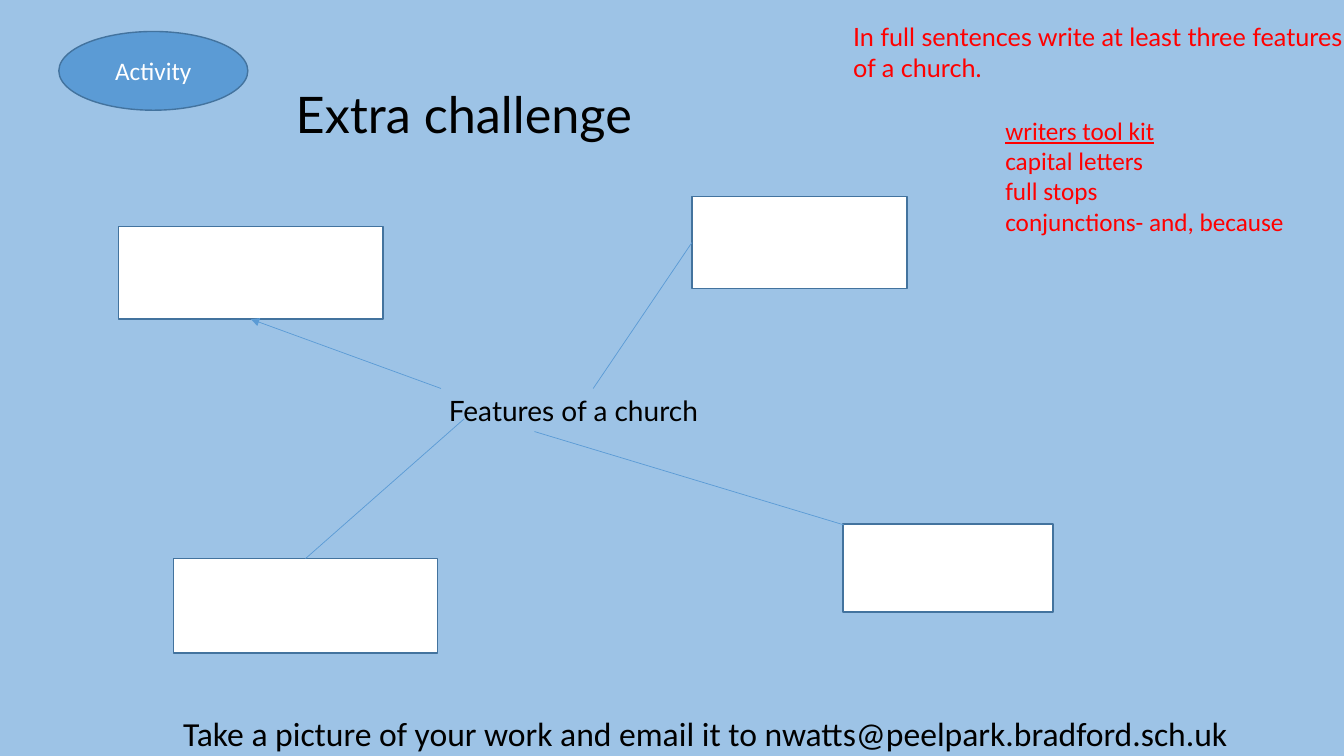
from dataclasses import dataclass
from typing import Optional

from lxml import etree
from pptx import Presentation, util as u
from pptx.dml.color import RGBColor
from pptx.enum import shapes, text
from pptx.oxml import ns

EMU_PER_PX = 9525
TITLE_ONLY = 5
BACKGROUND, BLUE, DARK_BLUE = "9DC3E6", "5B9BD5", "43739E"
WHITE, BLACK, RED = "FFFFFF", "000000", "FF0000"
TOP, LEFT, BOTTOM = 0, 1, 2


@dataclass
class Area:
    left: int
    top: int
    width: int
    height: int

    def emu(self) -> list:
        return [px(n) for n in (self.left, self.top, self.width, self.height)]


@dataclass
class AnswerBox:
    """An empty box and the line that runs to it from the middle phrase."""
    area: Area
    start: tuple
    end: tuple
    side: Optional[int] = None
    arrow: bool = False


@dataclass
class Label:
    area: Area
    lines: list
    size: int
    font: str
    color: str
    underline_first: bool = False


ANSWER_BOXES = [
    AnswerBox(Area(113, 216, 252, 88), (420, 370), (239, 304), BOTTOM, arrow=True),
    AnswerBox(Area(659, 187, 205, 88), (565, 370), (659, 231), LEFT),
    AnswerBox(Area(803, 499, 200, 84), (509, 411), (804, 500)),
    AnswerBox(Area(165, 532, 252, 90), (442, 399), (291, 532), TOP),
]

LABELS = [
    Label(Area(418, 370, 296, 42), ["Features of a church"], 20, "Lato", BLACK),
    Label(Area(803, 16, 494, 97),
          ["In full sentences write at least three features of a church."],
          18, "Lato", RED),
    Label(Area(948, 105, 332, 156),
          ["writers tool kit", "capital letters", "full stops",
           "conjunctions- and, because"], 18, "Calibri", RED, underline_first=True),
    Label(Area(165, 674, 1024, 48),
          ["Take a picture of your work and email it to nwatts@peelpark.bradford.sch.uk"],
          24, "Calibri", BLACK),
]


def px(length: int) -> u.Emu:
    return u.Emu(length * EMU_PER_PX)


def rgb(color: str) -> RGBColor:
    return RGBColor.from_string(color)


def write(shape, lines: list, *, size: int, font: str, color: str,
          align=text.PP_ALIGN.LEFT, anchor=text.MSO_ANCHOR.TOP,
          underline_first: bool = False) -> None:
    frame = shape.text_frame
    frame.word_wrap = True
    frame.auto_size = text.MSO_AUTO_SIZE.NONE
    frame.vertical_anchor = anchor
    frame.text = "\n".join(lines)
    for index, paragraph in enumerate(frame.paragraphs):
        paragraph.alignment = align
        for run in paragraph.runs:
            run.font.size = u.Pt(size)
            run.font.name = font
            run.font.color.rgb = rgb(color)
            if underline_first and index == 0:
                run.font.underline = True


def add_filled(slide, kind, area: Area, fill: str):
    shape = slide.shapes.add_shape(kind, *area.emu())
    shape.shadow.inherit = False
    shape.fill.solid()
    shape.fill.fore_color.rgb = rgb(fill)
    shape.line.color.rgb = rgb(DARK_BLUE)
    shape.line.width = u.Pt(1)
    return shape


def add_answer_box(slide, box: AnswerBox) -> None:
    shape = add_filled(slide, shapes.MSO_SHAPE.RECTANGLE, box.area, WHITE)
    line = slide.shapes.add_connector(
        shapes.MSO_CONNECTOR.STRAIGHT, *[px(n) for n in box.start + box.end])
    if box.side is not None:
        line.end_connect(shape, box.side)
    line.line.color.rgb = rgb(BLUE)
    line.line.width = u.Pt(0.5)
    if box.arrow:
        etree.SubElement(line.line._get_or_add_ln(), ns.qn("a:tailEnd"), type="triangle")
    etree.SubElement(line._element.spPr, ns.qn("a:effectLst"))


def add_label(slide, label: Label) -> None:
    write(slide.shapes.add_textbox(*label.area.emu()), label.lines, size=label.size,
          font=label.font, color=label.color, underline_first=label.underline_first)


def main() -> None:
    presentation = Presentation()
    presentation.slide_width, presentation.slide_height = px(1280), px(720)
    slide = presentation.slides.add_slide(presentation.slide_layouts[TITLE_ONLY])
    slide.background.fill.solid()
    slide.background.fill.fore_color.rgb = rgb(BACKGROUND)

    title = slide.shapes.title
    title.left, title.top, title.width, title.height = Area(272, 74, 387, 68).emu()
    write(title, ["Extra challenge"], size=36, font="Lato", color=BLACK)

    activity = add_filled(slide, shapes.MSO_SHAPE.OVAL, Area(56, 30, 180, 75), BLUE)
    write(activity, ["Activity"], size=18, font="Calibri", color=WHITE,
          align=text.PP_ALIGN.CENTER, anchor=text.MSO_ANCHOR.MIDDLE)

    for box in ANSWER_BOXES:
        add_answer_box(slide, box)
    for label in LABELS:
        add_label(slide, label)
    presentation.save("out.pptx")


if __name__ == "__main__":
    main()
